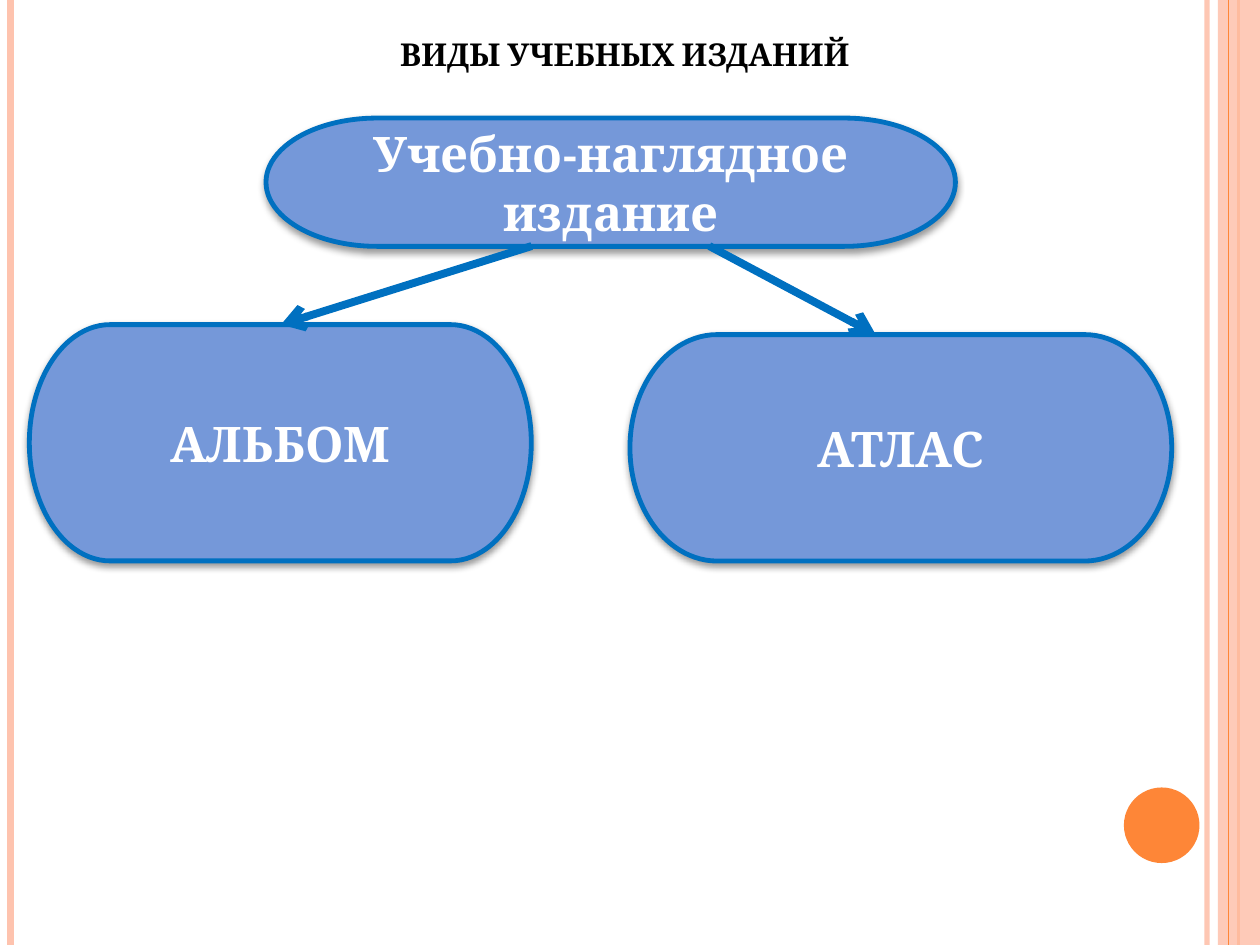
import pptx
import pptx.util
import pptx.dml.color
import pptx.enum.shapes
import pptx.enum.text
import pptx.oxml.ns
from lxml import etree

Pt = pptx.util.Pt
qn = pptx.oxml.ns.qn
SHAPES = pptx.enum.shapes.MSO_SHAPE
WIDTH, HEIGHT = 720, 540
COLORS = {
    "peach": "FEC3AE",
    "orange": "FE8637",
    "node": "7598D9",
    "outline": "0070C0",
    "heading": "000000",
    "label": "FFFFFF",
}


def rgb(name):
    return pptx.dml.color.RGBColor.from_string(COLORS[name])


def set_alpha(fill_parent, percent):
    color = fill_parent.find(qn("a:solidFill"))[0]
    etree.SubElement(color, qn("a:alpha"), val=str(percent * 1000))


class SlideBuilder:
    font = "Cambria"

    def __init__(self, slide):
        self.slide = slide

    def label(self, shape, text, size, color):
        frame = shape.text_frame
        frame.word_wrap = True
        frame.vertical_anchor = pptx.enum.text.MSO_ANCHOR.MIDDLE
        paragraph = frame.paragraphs[0]
        paragraph.text = text
        paragraph.alignment = pptx.enum.text.PP_ALIGN.CENTER
        paragraph.font.name = self.font
        paragraph.font.size = Pt(size)
        paragraph.font.bold = True
        paragraph.font.color.rgb = rgb(color)

    def title(self, text, left, top, width, height):
        heading = self.slide.shapes.title
        heading.left, heading.top = Pt(left), Pt(top)
        heading.width, heading.height = Pt(width), Pt(height)
        self.label(heading, text, 18, "heading")

    def shape(self, kind, left, top, width, height, fill):
        shape = self.slide.shapes.add_shape(
            kind, Pt(left), Pt(top), Pt(width), Pt(height))
        shape.fill.solid()
        shape.fill.fore_color.rgb = rgb(fill)
        shape.line.fill.background()
        shape.shadow.inherit = False
        return shape

    def node(self, text, left, top, width, height):
        node = self.shape(SHAPES.FLOWCHART_TERMINATOR, left, top, width, height, "node")
        node.line.color.rgb = rgb("outline")
        node.line.width = Pt(2.75)
        # Soft shadow straight below
        effects = node._element.spPr.find(qn("a:effectLst"))
        shadow = etree.SubElement(
            effects, qn("a:outerShdw"), blurRad=str(Pt(4)), dist=str(Pt(2)),
            dir="5400000", rotWithShape="0")
        black = etree.SubElement(shadow, qn("a:srgbClr"), val="000000")
        etree.SubElement(black, qn("a:alpha"), val="40000")
        self.label(node, text, 28, "label")

    def line(self, start, end, color, width):
        line = self.slide.shapes.add_connector(
            pptx.enum.shapes.MSO_CONNECTOR.STRAIGHT,
            *(Pt(value) for value in start + end))
        line.line.color.rgb = rgb(color)
        line.line.width = Pt(width)
        etree.SubElement(line._element.spPr, qn("a:effectLst"))
        return line

    def rule(self, x, color, width):
        return self.line((x, 0), (x, HEIGHT), color, width)

    def arrow(self, start, end):
        arrow = self.line(start, end, "outline", 4.5)
        etree.SubElement(arrow.line._get_or_add_ln(), qn("a:tailEnd"), type="arrow")


def main():
    deck = pptx.Presentation()
    deck.slide_width, deck.slide_height = Pt(WIDTH), Pt(HEIGHT)
    builder = SlideBuilder(deck.slides.add_slide(deck.slide_layouts[5]))

    # Side stripes and corner dot
    inner_rule = builder.rule(689.76, "peach", 3)
    set_alpha(inner_rule.line._get_or_add_ln(), 93)
    builder.rule(6, "peach", 4.5)
    builder.rule(707.76, "orange", 1.5)
    band = builder.shape(SHAPES.RECTANGLE, 696, 0, WIDTH - 696, HEIGHT, "peach")
    set_alpha(band._element.spPr, 87)
    builder.rule(702, "orange", 0.75)
    builder.shape(SHAPES.OVAL, 642.24, 450, 43.2, 43.2, "orange")

    # Heading
    builder.title("ВИДЫ УЧЕБНЫХ ИЗДАНИЙ", 123.84, 16.56, 466.56, 29)

    # Publication kind and its two types
    builder.node("Учебно-наглядное издание", 152, 67.5, 394, 73.3)
    builder.node("АЛЬБОМ", 16.8, 185.5, 286.8, 135)
    builder.node("АТЛАС", 360, 191.2, 309.6, 129.4)

    # Arrows from the kind to its types
    builder.arrow((405.36, 140.6), (500.4, 191.2))
    builder.arrow((303.84, 140.6), (160.56, 185.5))

    deck.save("out.pptx")


if __name__ == "__main__":
    main()
